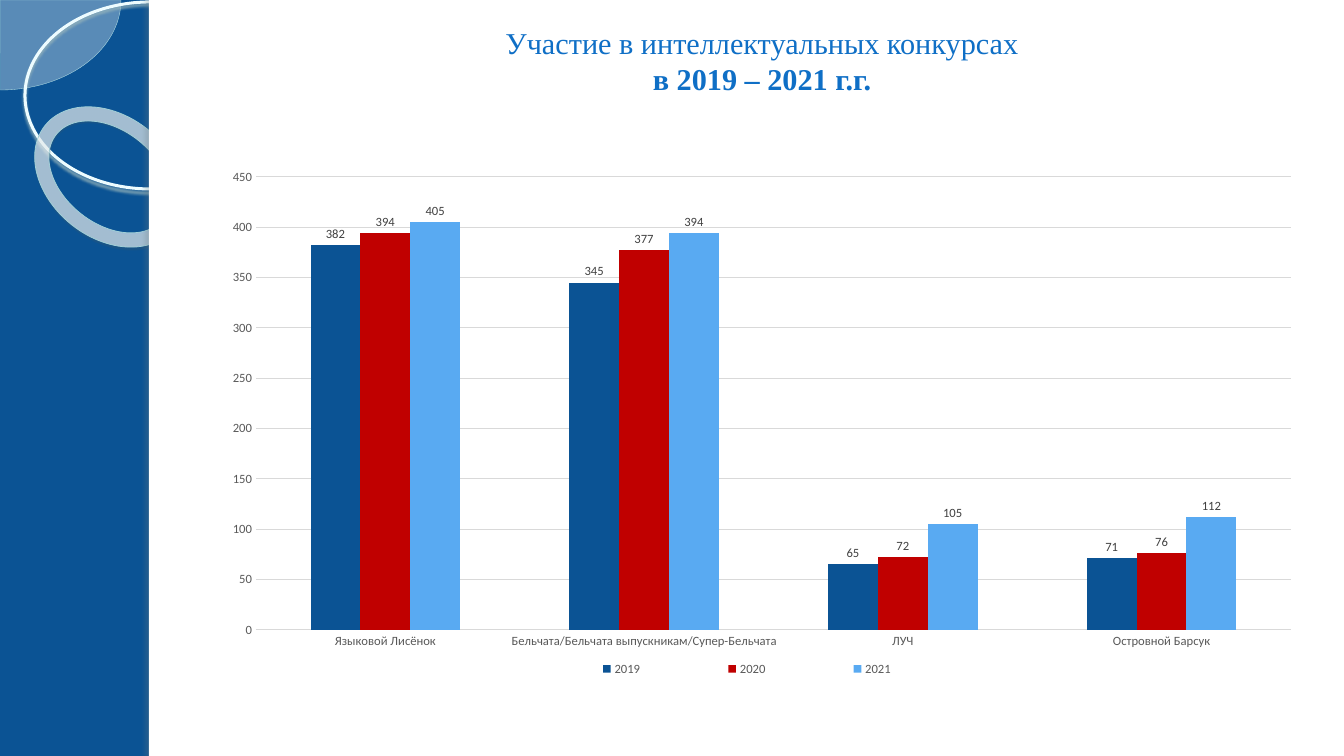
from lxml.etree import SubElement
from pptx import Presentation
from pptx.chart.data import CategoryChartData
from pptx.dml.color import RGBColor
from pptx.enum.chart import XL_CHART_TYPE as CT, XL_LABEL_POSITION as LP
from pptx.enum.chart import XL_LEGEND_POSITION as LEG, XL_TICK_MARK as TICK
from pptx.enum.shapes import MSO_SHAPE as MS
from pptx.enum.text import MSO_ANCHOR, PP_ALIGN
from pptx.oxml import parse_xml
from pptx.oxml.ns import nsdecls, qn
from pptx.util import Emu, Pt

TITLE = [("Участие в интеллектуальных конкурсах", False),
         ("в 2019 – 2021 г.г.", True)]
CONTESTS = ["Языковой Лисёнок", "Бельчата/Бельчата выпускникам/Супер-Бельчата",
            "ЛУЧ", "Островной Барсук"]
YEARS = {"2019": (382, 345, 65, 71),
         "2020": (394, 377, 72, 76),
         "2021": (405, 394, 105, 112)}

THEME = {
    "back": "0B5394", "panel": "FFFFFF", "title": "0F6FC6",
    "years": ("0B5394", "C00000", "59AAF2"),
    "axis_text": "595959", "label_text": "404040", "grid": "D9D9D9",
    "title_font": "Times New Roman", "chart_font": "Calibri",
    "title_size": 21.6, "chart_size": 9,
}

WIDTH, HEIGHT, EDGE = 1344, 756, 149
TITLE_BOX = (211, 24, 1102, 97)
CHART_BOX = (211, 159, 1102, 529)
PLOT_BOX = (256, 177, 1035, 453)
LEGEND_BOX = (519, 651, 456, 36)

DECOR = [
    dict(kind=MS.PIE, box=(-120, -90, 241, 180), adj=(0, 54),
         fill=("F8FEFF", 33), line=("AFDBE2", 0.25)),
    dict(kind=MS.OVAL, box=(25, 2, 250, 187),
         line=("EDFCFF", 2.15), shadow=("9CB9BE", 85, 2, 2, 90)),
    dict(kind=MS.DONUT, box=(27, 116, 165, 122), adj=(0.118,), turn=38.6,
         fill=("F9FEFF", 62), line=("A1CFD6", 0.58),
         shadow=("4B5E61", 35, 1, 1.2, 75)),
    dict(kind=MS.RECTANGLE, box=(EDGE, 0, WIDTH - EDGE, HEIGHT),
         fill=(THEME["panel"], 100)),
    dict(kind=MS.RECTANGLE, box=(EDGE, 0, 11, HEIGHT),
         fill=(THEME["panel"], 100), shadow=("6C7A7C", 25, 3, 3, 180)),
]


def px(n):
    return Emu(round(n * 914400 / 100.8))


def place(box):
    return [px(n) for n in box]


def rgb(name):
    return RGBColor.from_string(name)


def set_alpha(clr, percent):
    SubElement(clr, qn("a:alpha"), val=str(percent * 1000))


def add_shadow(sp, color, alpha, blur, dist, angle):
    effects = sp._element.spPr.find(qn("a:effectLst"))
    outer = SubElement(effects, qn("a:outerShdw"), blurRad=str(Pt(blur)),
                       dist=str(Pt(dist)), dir=str(angle * 60000),
                       algn="tl", rotWithShape="0")
    set_alpha(SubElement(outer, qn("a:srgbClr"), val=color), alpha)


def add_decor(s, kind, box, adj=(), turn=0, fill=None, line=None, shadow=None):
    sp = s.shapes.add_shape(kind, *place(box))
    sp.shadow.inherit = False
    sp.rotation = turn
    for i, value in enumerate(adj):
        sp.adjustments[i] = value
    if fill:
        sp.fill.solid()
        sp.fill.fore_color.rgb = rgb(fill[0])
        if fill[1] < 100:
            set_alpha(sp._element.spPr.find(qn("a:solidFill"))[0], fill[1])
    else:
        sp.fill.background()
    if line:
        sp.line.color.rgb = rgb(line[0])
        sp.line.width = Pt(line[1])
    else:
        sp.line.fill.background()
    if shadow:
        add_shadow(sp, *shadow)


def add_title(s):
    tf = s.shapes.add_textbox(*place(TITLE_BOX)).text_frame
    tf.word_wrap = True
    tf.vertical_anchor = MSO_ANCHOR.TOP
    tf.margin_top = tf.margin_bottom = 0
    p = tf.paragraphs[0]
    p.alignment = PP_ALIGN.CENTER
    for i, (text, bold) in enumerate(TITLE):
        if i:
            p.add_line_break()
        r = p.add_run()
        r.text = text
        r.font.name = THEME["title_font"]
        r.font.size = Pt(THEME["title_size"])
        r.font.bold = bold
        r.font.color.rgb = rgb(THEME["title"])


def style_font(font, color):
    font.name = THEME["chart_font"]
    font.size = Pt(THEME["chart_size"])
    font.color.rgb = rgb(THEME[color])


def set_layout(parent, index, box, inner=False):
    for old in parent.findall(qn("c:layout")):
        parent.remove(old)
    left, top, width, height = CHART_BOX
    parts = zip("xywh", ((box[0] - left) / width, (box[1] - top) / height,
                         box[2] / width, box[3] / height))
    target = '<c:layoutTarget val="inner"/>' if inner else ""
    modes = '<c:xMode val="edge"/><c:yMode val="edge"/>'
    values = "".join(f'<c:{k} val="{v:.4f}"/>' for k, v in parts)
    parent.insert(index, parse_xml(
        f'<c:layout {nsdecls("c")}><c:manualLayout>{target}{modes}{values}'
        "</c:manualLayout></c:layout>"))


def add_contest_chart(s):
    data = CategoryChartData()
    data.categories = CONTESTS
    for year, values in YEARS.items():
        data.add_series(year, values)
    chart = s.shapes.add_chart(CT.COLUMN_CLUSTERED, *place(CHART_BOX), data).chart
    chart.has_title = False
    style_font(chart.font, "axis_text")

    plot = chart.plots[0]
    plot.gap_width = 219
    plot.overlap = 0
    plot.vary_by_categories = False
    for series, color in zip(plot.series, THEME["years"]):
        series.format.fill.solid()
        series.format.fill.fore_color.rgb = rgb(color)
        labels = series.data_labels
        labels.show_value = True
        labels.position = LP.OUTSIDE_END
        style_font(labels.font, "label_text")

    for axis in (chart.category_axis, chart.value_axis):
        axis.major_tick_mark = axis.minor_tick_mark = TICK.NONE
        style_font(axis.tick_labels.font, "axis_text")
    value_axis = chart.value_axis
    value_axis.minimum_scale, value_axis.maximum_scale = 0, 450
    value_axis.major_unit = 50
    value_axis.format.line.fill.background()
    for line in (chart.category_axis.format.line,
                 value_axis.major_gridlines.format.line):
        line.color.rgb = rgb(THEME["grid"])
        line.width = Pt(0.75)

    chart.has_legend = True
    legend = chart.legend
    legend.position = LEG.BOTTOM
    legend.include_in_layout = False
    style_font(legend.font, "axis_text")
    set_layout(legend._element, 1, LEGEND_BOX)
    set_layout(chart._chartSpace.chart.plotArea, 0, PLOT_BOX, inner=True)


def main():
    prs = Presentation()
    prs.slide_width, prs.slide_height = px(WIDTH), px(HEIGHT)
    s = prs.slides.add_slide(prs.slide_layouts[6])
    s.background.fill.solid()
    s.background.fill.fore_color.rgb = rgb(THEME["back"])
    for part in DECOR:
        add_decor(s, **part)
    add_title(s)
    add_contest_chart(s)
    prs.save("out.pptx")


if __name__ == "__main__":
    main()
